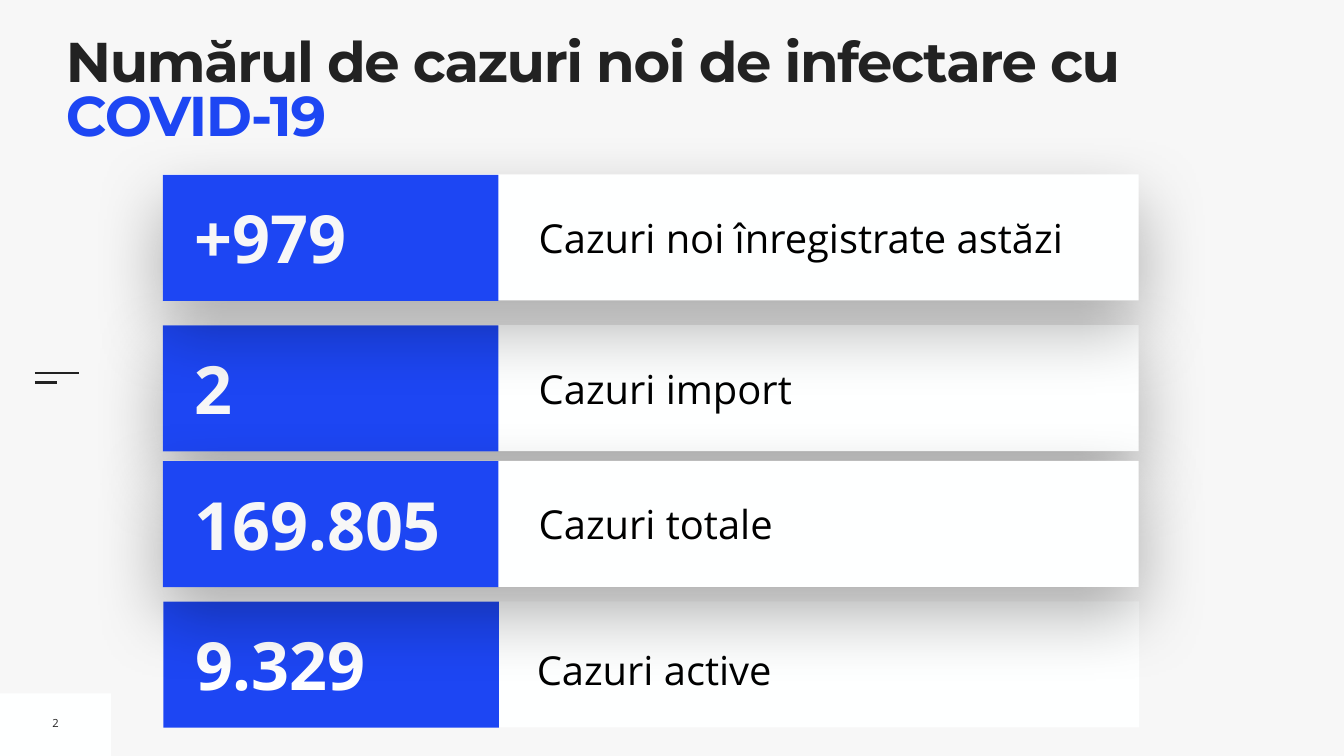
"""Build the slide with the daily COVID-19 case counts."""
from dataclasses import dataclass

from lxml import etree
from pptx import Presentation
from pptx import util as u
from pptx.dml.color import RGBColor
from pptx.enum import shapes, text
from pptx.oxml.ns import qn


@dataclass(frozen=True)
class Theme:
    back: str = "F7F7F7"
    card: str = "FEFFFF"
    accent: str = "1D46F3"
    dark: str = "222222"
    black: str = "000000"
    white: str = "FFFFFF"
    heading_font: str = "Montserrat"
    body_font: str = "Open Sans"
    title_size: int = 80
    number_size: int = 95
    label_size: int = 57
    page_size: int = 16


def points(*lengths):
    return [u.Pt(length) for length in lengths]


def write(box, spans, *, font, size, bold=False, align=text.PP_ALIGN.LEFT,
          anchor=text.MSO_ANCHOR.MIDDLE, inset=7.2, wrap=True,
          line_spacing=1.0, before=0, tracking=0):
    frame = box.text_frame
    frame.word_wrap = wrap
    frame.vertical_anchor = anchor
    frame.margin_left = frame.margin_right = u.Pt(inset)
    frame.margin_top = frame.margin_bottom = u.Pt(inset)
    para = frame.paragraphs[0]
    para.alignment = align
    para.line_spacing = line_spacing
    para.space_before = u.Pt(before)
    for words, color in spans:
        span = para.add_run()
        span.text = words
        span.font.name = font
        span.font.size = u.Pt(size)
        span.font.bold = bold
        span.font.color.rgb = RGBColor.from_string(color)
        if tracking:
            span.font._element.set("spc", str(tracking * 100))


class SlideBuilder:
    def __init__(self, slide, theme):
        self.slide = slide
        self.theme = theme

    def background(self, color):
        fill = self.slide.background.fill
        fill.solid()
        fill.fore_color.rgb = RGBColor.from_string(color)

    def panel(self, parent, bounds, color, shadow=False):
        shape = parent.shapes.add_shape(shapes.MSO_SHAPE.RECTANGLE, *points(*bounds))
        shape.fill.solid()
        shape.fill.fore_color.rgb = RGBColor.from_string(color)
        shape.line.fill.background()
        shape.shadow.inherit = False
        if shadow:
            self.drop_shadow(shape)

    def drop_shadow(self, shape):
        effects = shape._element.spPr.find(qn("a:effectLst"))
        outer = etree.SubElement(effects, qn("a:outerShdw"), blurRad=str(u.Pt(100)),
                                 dist=str(u.Pt(40)), dir="5400000", rotWithShape="0")
        color = etree.SubElement(outer, qn("a:srgbClr"), val=self.theme.black)
        etree.SubElement(color, qn("a:alpha"), val="30000")

    def rule(self, left, top, width):
        line = self.slide.shapes.add_connector(
            shapes.MSO_CONNECTOR.STRAIGHT, *points(left, top, left + width, top))
        line.line.color.rgb = RGBColor.from_string(self.theme.dark)
        line.line.width = u.Pt(3)
        etree.SubElement(line._element.spPr, qn("a:effectLst"))

    def words(self, parent, bounds, spans, **style):
        write(parent.shapes.add_textbox(*points(*bounds)), spans, **style)

    def counter(self, top, number, label, *, left=232.6, color=None, shadow=True,
                label_box=(762.5, 48.5, 846.7, 83.5), **label_style):
        theme = self.theme
        group = self.slide.shapes.add_group_shape()
        self.panel(group, (left, top, 1394, 180), theme.card, shadow)
        label_left, drop, width, height = label_box
        self.words(group, (label_left, top + drop, width, height),
                   [(label, theme.black)], font=theme.body_font,
                   size=theme.label_size, **label_style)
        self.panel(group, (left, top + 0.4, 479.5, 180), theme.accent)
        self.words(group, (left + 38.2, top + 25, 434, 129.6),
                   [(number, color or theme.back)], font=theme.body_font,
                   size=theme.number_size, bold=True)


def main():
    theme = Theme()
    deck = Presentation()
    deck.slide_width, deck.slide_height = points(1920, 1080)
    page = SlideBuilder(deck.slides.add_slide(deck.slide_layouts[6]), theme)

    page.background(theme.back)
    page.panel(page.slide, (0, 990.7, 158.4, 89.3), theme.card)
    page.rule(49.7, 533.5, 63.4)
    page.rule(49.7, 546.5, 31.7)
    page.words(page.slide, (67, 1014.5, 24.5, 36.7), [("2", theme.dark)],
               font=theme.body_font, size=theme.page_size,
               align=text.PP_ALIGN.CENTER, wrap=False)
    page.words(page.slide, (94.3, 56.2, 1723.7, 113.8),
               [("Numărul de cazuri noi de infectare cu ", theme.dark),
                ("COVID-19", theme.accent)],
               font=theme.heading_font, size=theme.title_size, bold=True,
               anchor=text.MSO_ANCHOR.TOP, inset=0, line_spacing=0.8, tracking=-2)

    page.counter(859, "9.329", "Cazuri active", left=233.3, color=theme.white,
                 shadow=False, label_box=(766.8, 41.7, 833.8, 90),
                 inset=0, line_spacing=1.3, before=20)
    for top, number, label in (
            (464.4, "2", "Cazuri import"),
            (249.3, "+979", "Cazuri noi înregistrate astăzi"),
            (658.3, "169.805", "Cazuri totale")):
        page.counter(top, number, label)

    deck.save("out.pptx")


if __name__ == "__main__":
    main()
